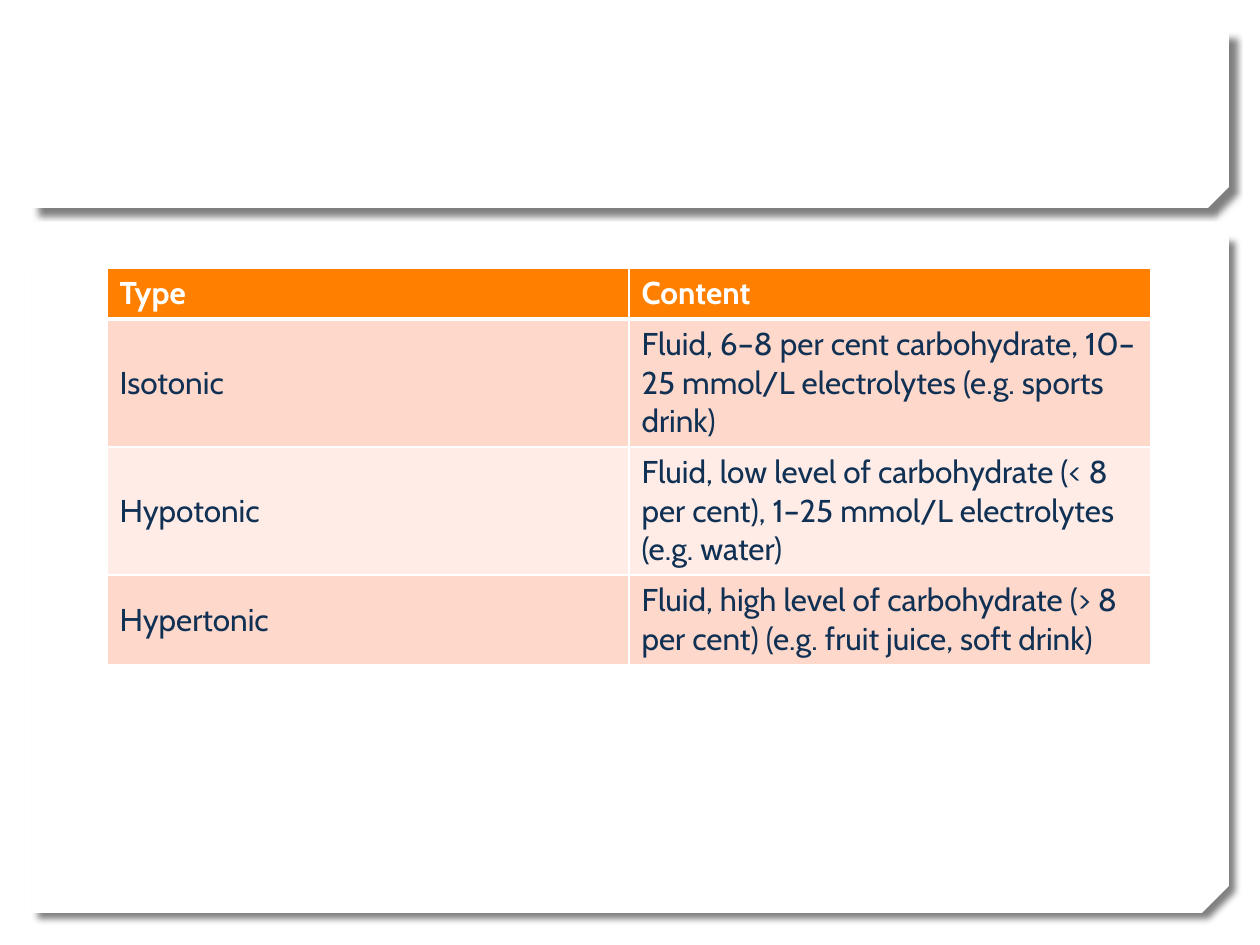
import pptx
import pptx.dml.color
import pptx.enum.shapes
import pptx.enum.text
import pptx.oxml
import pptx.oxml.ns
import pptx.util

PX = 914400 / 126
NS = pptx.oxml.ns.nsdecls("a")
WHITE, ORANGE, NAVY = "FFFFFF", "FF7F01", "103154"
BANDS = ("FFD8CC", "FFECE7")
ROW_HEIGHT = 51
COLUMN_WIDTH = 522

ROWS = [
    ("Type", "Content"),
    ("Isotonic", "Fluid, 6–8 per cent carbohydrate, 10–25 mmol/L electrolytes (e.g. sports drink)"),
    ("Hypotonic", "Fluid, low level of carbohydrate (< 8 per cent), 1–25 mmol/L electrolytes (e.g. water)"),
    ("Hypertonic", "Fluid, high level of carbohydrate (> 8 per cent) (e.g. fruit juice, soft drink)"),
]


def px(length):
    return pptx.util.Emu(round(length * PX))


def color(value):
    return pptx.dml.color.RGBColor.from_string(value)


def paint(fill, value):
    fill.solid()
    fill.fore_color.rgb = color(value)


def add_card(page, top, height, snip):
    """Add a white panel with snipped corners and a soft shadow."""
    card = page.shapes.add_shape(
        pptx.enum.shapes.MSO_SHAPE.SNIP_2_DIAG_RECTANGLE,
        px(32), px(top), px(1197), px(height))
    card.adjustments[0], card.adjustments[1] = snip, 0
    paint(card.fill, WHITE)
    card.line.fill.background()
    card.shadow.inherit = False
    effects = card.element.spPr.find(pptx.oxml.ns.qn("a:effectLst"))
    effects.append(pptx.oxml.parse_xml(
        f'<a:outerShdw {NS} blurRad="50800" dist="63500" dir="2700000" '
        'algn="tl" rotWithShape="0"><a:srgbClr val="000000">'
        '<a:alpha val="50000"/></a:srgbClr></a:outerShdw>'))


def add_borders(cell, widths):
    """Draw white cell edges; widths maps each edge to points."""
    properties = cell._tc.get_or_add_tcPr()
    for edge, width in widths.items():
        properties.append(pptx.oxml.parse_xml(
            f'<a:ln{edge} {NS} w="{pptx.util.Pt(width)}"><a:solidFill>'
            f'<a:srgbClr val="{WHITE}"/></a:solidFill></a:ln{edge}>'))


def fill_cell(cell, text, row):
    header = row == 0
    add_borders(cell, {"L": 1, "R": 1, "T": 3 if row == 1 else 1, "B": 3 if header else 1})
    paint(cell.fill, ORANGE if header else BANDS[(row - 1) % 2])
    cell.vertical_anchor = pptx.enum.text.MSO_ANCHOR.MIDDLE
    span = cell.text_frame.paragraphs[0].add_run()
    span.text = text
    for name, value in {"name": "Cabin", "size": pptx.util.Pt(18), "bold": header}.items():
        setattr(span.font, name, value)
    span.font.color.rgb = color(WHITE if header else NAVY)


def add_drinks_table(page):
    columns = len(ROWS[0])
    table = page.shapes.add_table(
        len(ROWS), columns, px(107), px(268),
        px(columns * COLUMN_WIDTH), px(len(ROWS) * ROW_HEIGHT)).table
    for column in table.columns:
        column.width = px(COLUMN_WIDTH)
    for row, texts in enumerate(ROWS):
        table.rows[row].height = px(ROW_HEIGHT)
        for column, text in enumerate(texts):
            fill_cell(table.cell(row, column), text, row)


def main():
    deck = pptx.Presentation()
    deck.slide_width, deck.slide_height = px(1260), px(945)
    page = deck.slides.add_slide(deck.slide_layouts[6])
    paint(page.background.fill, WHITE)
    add_card(page, top=236, height=677, snip=0.04)
    add_card(page, top=32, height=176, snip=0.12)
    add_drinks_table(page)
    deck.save("out.pptx")


if __name__ == "__main__":
    main()
